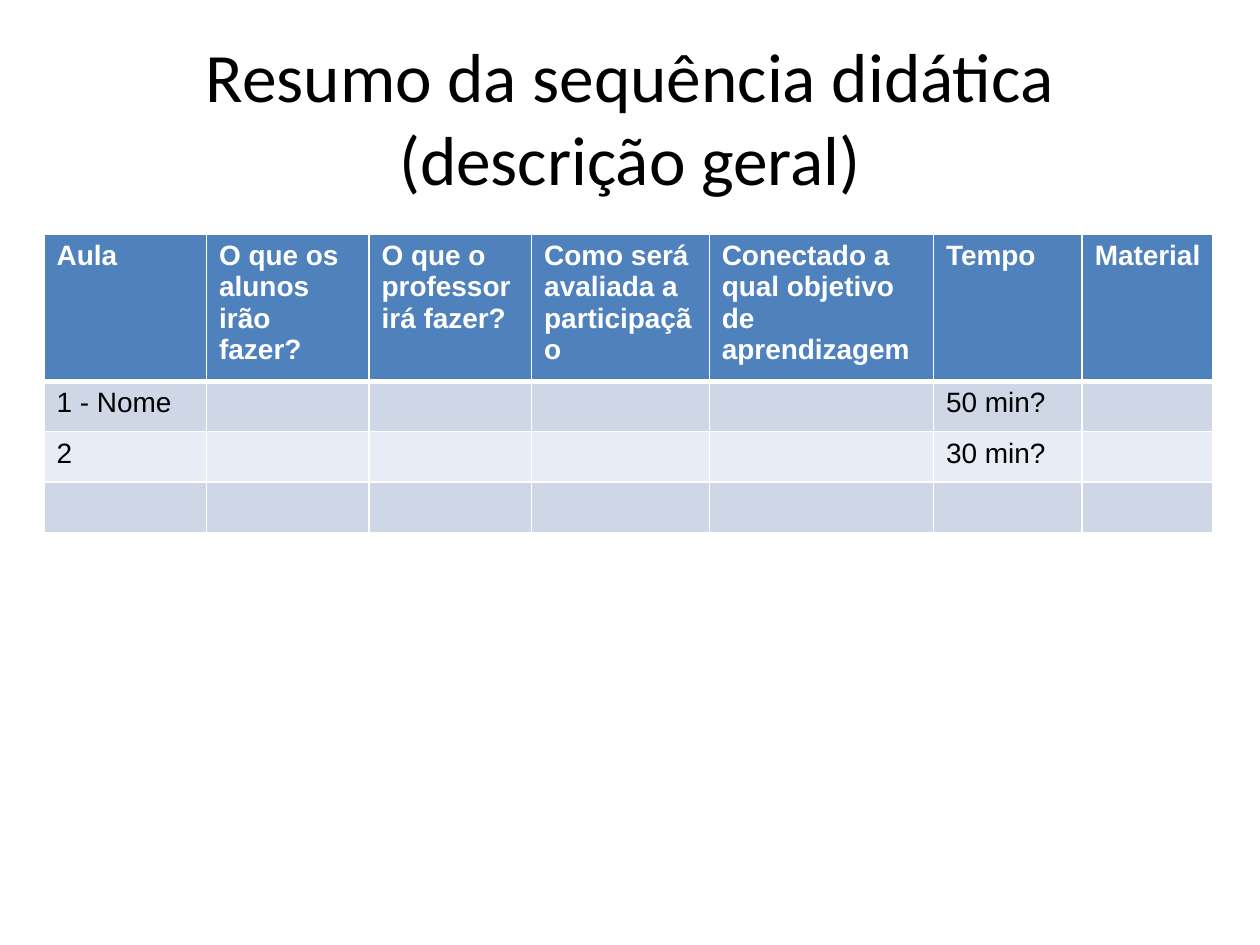
import pptx
import pptx.util
import pptx.dml.color
import pptx.enum.text
import pptx.oxml.ns
from lxml import etree

Inches, Pt = pptx.util.Inches, pptx.util.Pt

# Content
TITLE = "Resumo da sequência didática (descrição geral)"
HEADERS = ["Aula", "O que os alunos irão fazer?", "O que o professor irá fazer?",
           "Como será avaliada a participação",
           "Conectado a qual objetivo de aprendizagem", "Tempo", "Material"]
LESSONS = [
    ["1 - Nome", "", "", "", "", "50 min?", ""],
    ["2", "", "", "", "", "30 min?", ""],
    [""] * len(HEADERS),
]

# Layout and colours
COLUMN_WIDTHS = [1.29, 1.29, 1.29, 1.41, 1.78, 1.18, 1.04]
HEADER_HEIGHT, LESSON_HEIGHT = 1.08, 0.4
TABLE_LEFT, TABLE_TOP = 0.35, 1.86
HEADER_FILL, BAND_FILLS = "4F81BD", ["CFD7E7", "E8ECF4"]
WHITE, BLACK = "FFFFFF", "000000"


def colour(value):
    return pptx.dml.color.RGBColor.from_string(value)


def style_font(font, name, size, value, bold=False):
    font.name, font.size, font.bold = name, Pt(size), bold
    font.color.rgb = colour(value)


def set_borders(cell, widths):
    properties = cell._tc.get_or_add_tcPr()
    for side, width in widths.items():
        line = etree.SubElement(properties, pptx.oxml.ns.qn("a:ln" + side), w=str(Pt(width)))
        fill = etree.SubElement(line, pptx.oxml.ns.qn("a:solidFill"))
        etree.SubElement(fill, pptx.oxml.ns.qn("a:srgbClr"), val=WHITE)


deck = pptx.Presentation()
deck.slide_width, deck.slide_height = Inches(10), Inches(7.5)
page = deck.slides.add_slide(deck.slide_layouts[6])

# Title
box = page.shapes.add_textbox(Inches(0.5), Inches(0.3), Inches(9), Inches(1.25))
box.text_frame.word_wrap = True
box.text_frame.vertical_anchor = pptx.enum.text.MSO_ANCHOR.MIDDLE
para = box.text_frame.paragraphs[0]
para.text = TITLE
para.alignment = pptx.enum.text.PP_ALIGN.CENTER
style_font(para.font, "Calibri", 39.6, BLACK)

# Lesson table
rows = [HEADERS] + LESSONS
heights = [HEADER_HEIGHT] + [LESSON_HEIGHT] * len(LESSONS)
table = page.shapes.add_table(
    len(rows), len(HEADERS), Inches(TABLE_LEFT), Inches(TABLE_TOP),
    Inches(sum(COLUMN_WIDTHS)), Inches(sum(heights))).table
for column, width in zip(table.columns, COLUMN_WIDTHS):
    column.width = Inches(width)

for row_index, (texts, height) in enumerate(zip(rows, heights)):
    table.rows[row_index].height = Inches(height)
    is_header = row_index == 0
    fill = HEADER_FILL if is_header else BAND_FILLS[(row_index - 1) % 2]
    borders = {"L": 1, "R": 1, "T": 3 if row_index == 1 else 1, "B": 3 if is_header else 1}
    for column_index, text in enumerate(texts):
        cell = table.cell(row_index, column_index)
        set_borders(cell, borders)
        cell.fill.solid()
        cell.fill.fore_color.rgb = colour(fill)
        para = cell.text_frame.paragraphs[0]
        para.text = text
        style_font(para.font, "Arial", 16, WHITE if is_header else BLACK, is_header)

deck.save("out.pptx")
